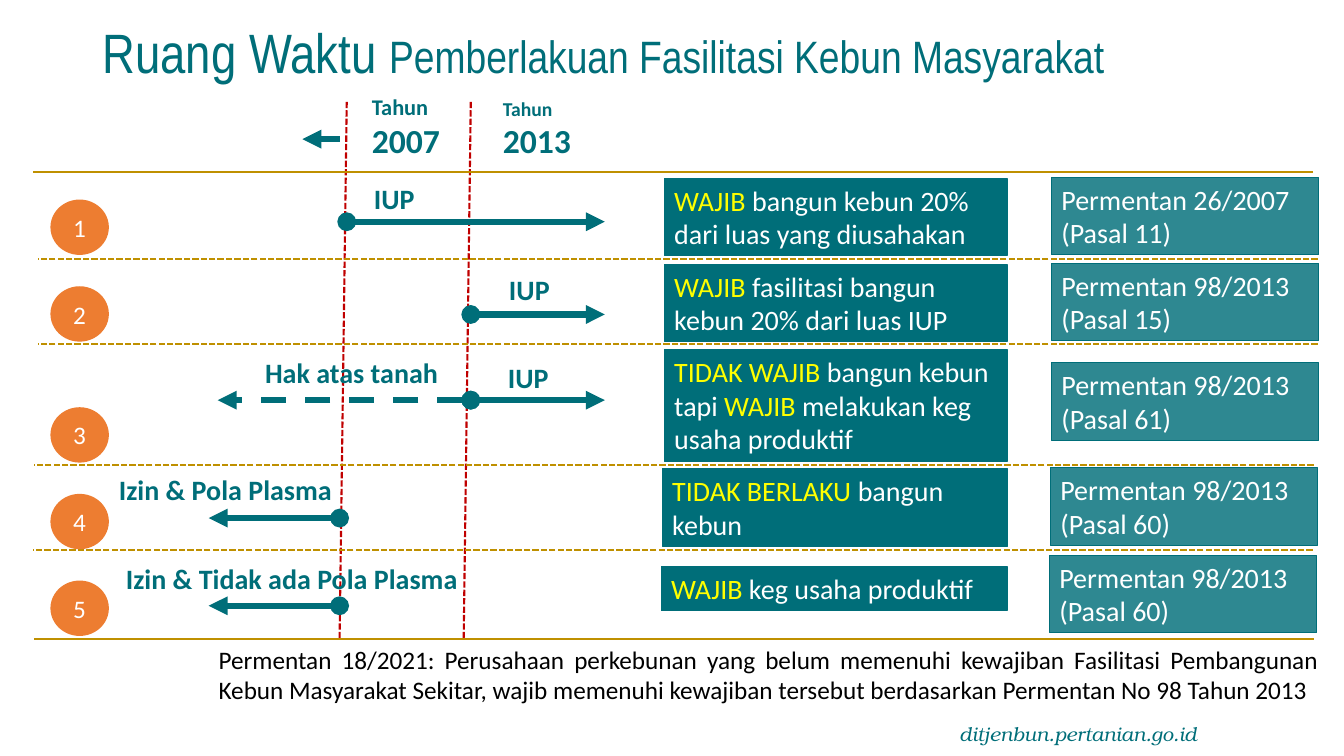
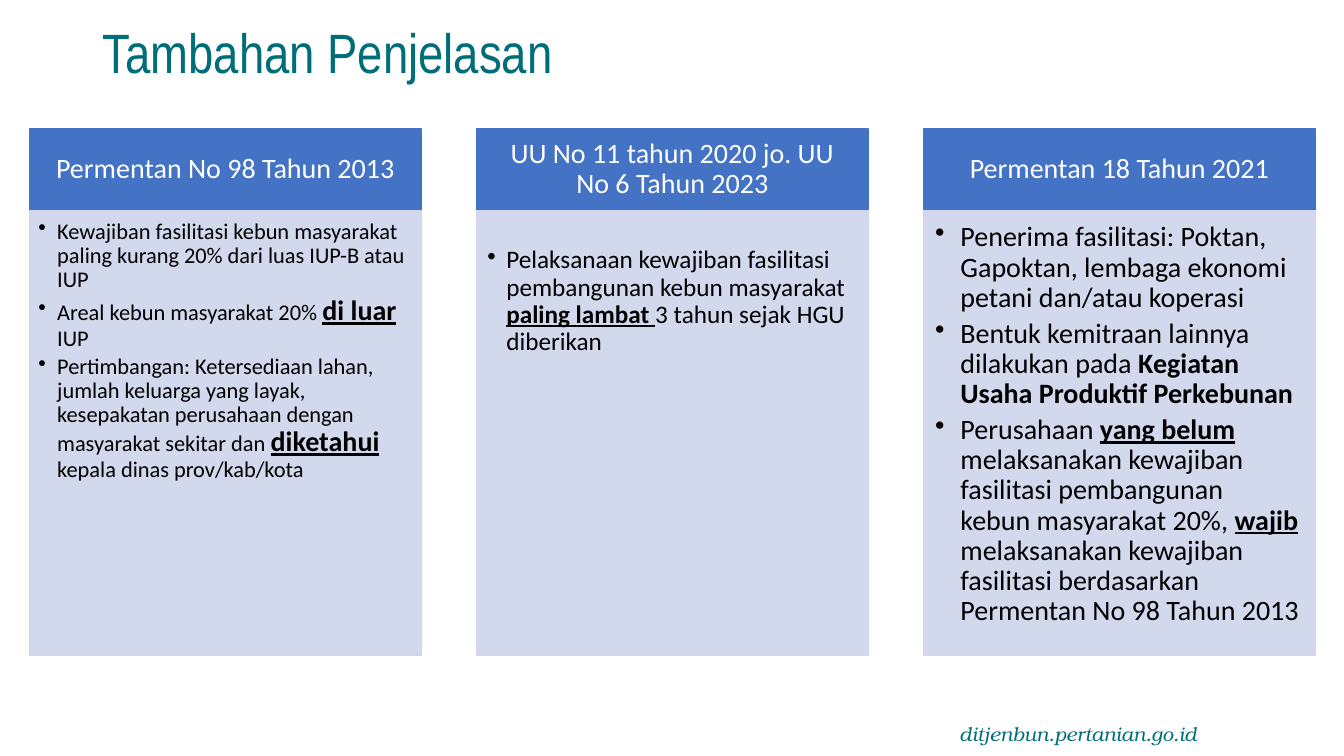
from lxml import etree
from pptx import Presentation
from pptx.dml.color import RGBColor
from pptx.enum.dml import MSO_LINE
from pptx.enum.shapes import MSO_CONNECTOR, MSO_SHAPE
from pptx.enum.text import MSO_ANCHOR, PP_ALIGN
from pptx.oxml.ns import qn
from pptx.util import Inches, Pt

TEAL = RGBColor(0x00, 0x6E, 0x79)
RED = RGBColor(0xC0, 0x00, 0x00)
GOLD = RGBColor(0xBF, 0x90, 0x00)
ORANGE = RGBColor(0xED, 0x7D, 0x31)
BLUE = RGBColor(0x44, 0x72, 0xC4)
PALE = RGBColor(0xCF, 0xD5, 0xEA)
YELLOW = RGBColor(0xFF, 0xFF, 0x00)
WHITE = RGBColor(0xFF, 0xFF, 0xFF)
BLACK = RGBColor(0, 0, 0)

LEFT, CENTER, JUSTIFY = PP_ALIGN.LEFT, PP_ALIGN.CENTER, PP_ALIGN.JUSTIFY
TOP, MIDDLE = MSO_ANCHOR.TOP, MSO_ANCHOR.MIDDLE
RECT, OVAL = MSO_SHAPE.RECTANGLE, MSO_SHAPE.OVAL
STRAIGHT = MSO_CONNECTOR.STRAIGHT
DASH, DOTS = MSO_LINE.DASH, MSO_LINE.SQUARE_DOT

BODY, HEAD, SITE = "Calibri", "Arial Narrow", "TeX Gyre Bonum"
WIDE, HIGH = Inches(13.33), Inches(7.5)

# Places and sizes are percentages of the slide's width and height.
X_2007, X_2013 = 25.8, 35.03
LEAN = 0.53
X_PAST, X_NEXT = 15.53, 45
Y_TOP, Y_END = 22.8, 84.53
DUTY_END = 74.93

MUST = {"color": YELLOW}
BOLD = {"bold": True}
KEY = {"bold": True, "underline": True}
BIG = {"bold": True, "underline": True, "size": 20}

# Number top, duty (left, top, height, runs), rule (left, top, lines)
ROWS = [
    (26.4, (49.43, 23.6, 10.27,
            [("WAJIB ", MUST), "bangun kebun 20% dari luas yang diusahakan"]),
     (78.23, 23.47, "26/2007", 11)),
    (37.87, (49.43, 34.93, 10.27,
             [("WAJIB ", MUST), "fasilitasi bangun kebun 20% dari luas IUP"]),
     (78.23, 34.8, "98/2013", 15)),
    (53.87, (49.43, 46.27, 14.8,
             [("TIDAK WAJIB ", MUST), "bangun kebun tapi ", ("WAJIB ", MUST),
              "melakukan keg usaha produktif"]),
     (78.23, 48, "98/2013", 61)),
    (65.33, (49.28, 62, 10.27, [("TIDAK BERLAKU ", MUST), "bangun kebun"]),
     (78.15, 61.87, "98/2013", 60)),
    (76.8, (49.2, 74.93, 5.87, [("WAJIB", MUST), " keg usaha produktif"]),
     (78.08, 73.47, "98/2013", 60)),
]

# From, to, level, dash, dot at the start
ARROWS = [
    (X_2007 - LEAN, 22.5, 18.4, None, False),
    (X_2007, X_NEXT, 29.33, None, True),
    (X_2013, X_NEXT, 41.6, None, True),
    (X_2013, X_NEXT, 52.93, None, True),
    (X_2013, 16.2, 52.93, DASH, True),
    (X_2007 - LEAN, X_PAST, 68.53, None, True),
    (X_2007 - LEAN, X_PAST, 80.13, None, True),
]

LABELS = [
    ("IUP", 27.08, 23.33, 6),
    ("IUP", 37.13, 35.33, 6),
    ("IUP", 37.05, 47.07, 6),
    ("Hak atas tanah", 18.98, 46.4, 16),
    ("Izin & Pola Plasma", 8.1, 61.87, 19),
    ("Izin & Tidak ada Pola Plasma", 8.63, 73.6, 28),
]

# Left, level, dash
BARS = [(2.48, Y_TOP, None), (2.85, 34.27, DOTS), (2.85, 45.47, DOTS),
        (2.55, 61.47, DOTS), (2.48, 72.8, DOTS), (2.55, Y_END, None)]

# Heading, text size, indent, insets (left, top, right, bottom), points
CARDS = [
    ("Permentan No 98 Tahun 2013", 16, 13.5, (6.5, 6.5, 8.5, 10), [
        ["Kewajiban fasilitasi kebun masyarakat paling kurang 20% dari luas "
         "IUP-B atau IUP"],
        ["Areal kebun masyarakat 20% ", ("di luar ", BIG), "IUP"],
        ["Pertimbangan: Ketersediaan lahan, jumlah keluarga yang layak, "
         "kesepakatan perusahaan dengan masyarakat sekitar dan ",
         ("diketahui", BIG), " kepala dinas prov/kab/kota"],
    ]),
    ("UU No 11 tahun 2020 jo. UU No 6 Tahun 2023", 18, 13.5,
     (8, 26, 10, 11.5), [
         ["Pelaksanaan kewajiban fasilitasi pembangunan kebun masyarakat ",
          ("paling lambat ", KEY), "3 tahun sejak HGU diberikan"],
     ]),
    ("Permentan 18 Tahun 2021", 20, 18, (8.5, 8.5, 11.5, 12), [
        ["Penerima fasilitasi: Poktan, Gapoktan, lembaga ekonomi petani "
         "dan/atau koperasi"],
        ["Bentuk kemitraan lainnya dilakukan pada ",
         ("Kegiatan Usaha Produktif Perkebunan", BOLD)],
        ["Perusahaan ", ("yang belum ", KEY),
         "melaksanakan kewajiban fasilitasi pembangunan kebun masyarakat "
         "20%, ", ("wajib", KEY),
         " melaksanakan kewajiban fasilitasi berdasarkan Permentan No 98 "
         "Tahun 2013"],
    ]),
]


def across(share):
    return round(WIDE * share / 100)


def down(share):
    return round(HIGH * share / 100)


def area(x, y, w, h):
    return across(x), down(y), across(w), down(h)


def write(shape, paras, size, color, font=BODY, align=LEFT, anchor=TOP,
          space=None, after=0, indent=0, **style):
    """Fill a shape with paragraphs, each a list of texts or (text, style)."""
    frame = shape.text_frame
    frame.word_wrap = True
    frame.vertical_anchor = anchor
    base = {"size": size, "color": color, **style}
    for i, parts in enumerate(paras):
        para = frame.add_paragraph() if i else frame.paragraphs[0]
        if indent:
            props = para._p.get_or_add_pPr()
            props.set("marL", str(Pt(indent)))
            props.set("indent", str(-Pt(indent)))
            etree.SubElement(props, qn("a:buChar")).set("char", "•")
        para.alignment = align
        para.line_spacing = space
        para.space_after = Pt(after)
        for part in parts:
            text, extra = (part, {}) if isinstance(part, str) else part
            look = {**base, **extra}
            run = para.add_run()
            run.text = text
            run.font.name = font
            run.font.size = Pt(look["size"])
            run.font.color.rgb = look["color"]
            for key in ("bold", "italic", "underline"):
                if key in look:
                    setattr(run.font, key, look[key])


def label(slide, box, paras, size, color=TEAL, **style):
    write(slide.shapes.add_textbox(*area(*box)), paras, size, color, **style)


def block(slide, kind, box, fill, edge=None, width=0.75, alpha=None):
    shape = slide.shapes.add_shape(kind, *area(*box))
    shape.shadow.inherit = False
    shape.fill.solid()
    shape.fill.fore_color.rgb = fill
    if edge is None:
        shape.line.fill.background()
    else:
        shape.line.color.rgb = edge
        shape.line.width = Pt(width)
    if alpha:
        tint = shape._element.spPr.find(qn("a:solidFill"))[0]
        etree.SubElement(tint, qn("a:alpha")).set("val", str(alpha * 1000))
    return shape


def rule(slide, start, end, color, width=1.5, dash=None, dot=False, tip=False):
    """Draw a line, with a dot at its start or an arrowhead at its end."""
    (x1, y1), (x2, y2) = start, end
    line = slide.shapes.add_connector(
        STRAIGHT, across(x1), down(y1), across(x2), down(y2))
    line.line.color.rgb = color
    line.line.width = Pt(width)
    if dash:
        line.line.dash_style = dash
    props = line._element.spPr
    stroke = props.find(qn("a:ln"))
    if dot:
        etree.SubElement(stroke, qn("a:headEnd")).set("type", "oval")
    if tip:
        etree.SubElement(stroke, qn("a:tailEnd")).set("type", "triangle")
    etree.SubElement(props, qn("a:effectLst"))


def start(deck, title):
    """Add a blank slide with the shared title and footer."""
    slide = deck.slides.add_slide(deck.slide_layouts[6])
    label(slide, (70.65, 94.8, 21, 4.5), [["ditjenbun.pertanian.go.id"]], 14,
          font=SITE, italic=True)
    label(slide, (6.9, 3.2, 91.05, 8.27), [title], 39.6, font=HEAD,
          anchor=MIDDLE, space=0.9)
    return slide


def times(deck):
    slide = start(deck, ["Ruang Waktu ", (
        "Pemberlakuan Fasilitasi Kebun Masyarakat", {"size": 32.4})])
    for year, x, y, size in (("2007", 26.93, 11.6, 16),
                             ("2013", 36.68, 12.13, 14)):
        label(slide, (x, y, 8, 10.3), [["Tahun"], [(year, {"size": 24})]],
              size, bold=True)
    for x in (X_2007, X_2013):
        rule(slide, (x, 13.47), (x - LEAN, Y_END), RED, dash=DOTS)
    for x1, x2, y, dash, dot in ARROWS:
        rule(slide, (x1, y), (x2, y), TEAL, 4.5, dash, dot, tip=True)
    for text, x, y, w in LABELS:
        label(slide, (x, y, w, 5.87), [[text]], 20, bold=True)
    for x, y, dash in BARS:
        rule(slide, (x + 95.2, y), (x, y), GOLD, dash=dash)
    for num, (top, duty, law) in enumerate(ROWS, 1):
        disc = block(slide, OVAL, (3.75, top, 4.35, 7.33), ORANGE)
        write(disc, [[str(num)]], 18, WHITE, align=CENTER, anchor=MIDDLE)
        x, y, h, parts = duty
        task = block(slide, RECT, (x, y, DUTY_END - x, h), TEAL, TEAL)
        write(task, [parts], 20, WHITE)
        x, y, code, item = law
        cite = block(slide, RECT, (x, y, 19.88, 10.27), TEAL, TEAL, alpha=82)
        write(cite, [[f"Permentan {code}"], [f"(Pasal {item})"]], 20, WHITE)
    label(slide, (X_PAST, Y_END, 83.33, 9.47), [[
        "Permentan 18/2021: Perusahaan perkebunan yang belum memenuhi "
        "kewajiban Fasilitasi Pembangunan Kebun Masyarakat Sekitar, wajib "
        "memenuhi kewajiban tersebut berdasarkan Permentan No 98 Tahun 2013"
    ]], 18, BLACK, align=JUSTIFY)


def notes(deck):
    slide = start(deck, ["Tambahan Penjelasan"])
    for i, (head, size, indent, pads, points) in enumerate(CARDS):
        x, w = 2.18 + i * 33.26, 29.18
        band = block(slide, RECT, (x, 17.07, w, 10.67), BLUE, BLUE, 1)
        frame = band.text_frame
        frame.margin_left = frame.margin_right = Pt(11.5)
        write(band, [[head]], 20, WHITE, align=CENTER, anchor=MIDDLE,
              space=0.9)
        card = block(slide, RECT, (x, 27.87, w, 58.8), PALE, PALE, 1, 90)
        for side, pad in zip(("left", "top", "right", "bottom"), pads):
            setattr(card.text_frame, f"margin_{side}", Pt(pad))
        write(card, points, size, BLACK, space=0.9,
              after=round(size * 0.18), indent=indent)


def main():
    deck = Presentation()
    deck.slide_width, deck.slide_height = WIDE, HIGH
    times(deck)
    notes(deck)
    deck.save("out.pptx")


if __name__ == "__main__":
    main()
